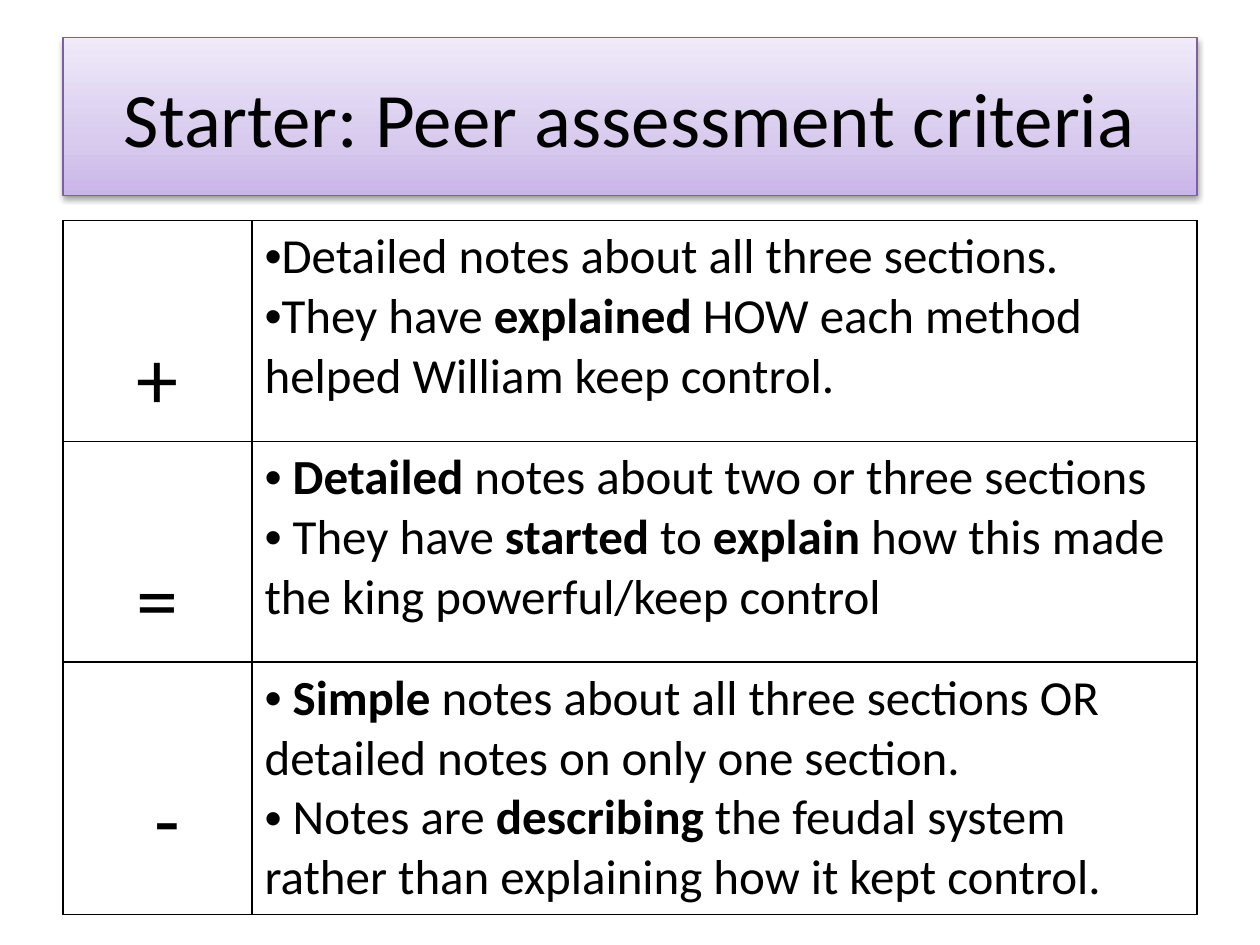
from dataclasses import dataclass

from lxml.etree import SubElement
from pptx import Presentation
from pptx.dml.color import RGBColor
from pptx.enum.text import MSO_ANCHOR, PP_ALIGN
from pptx.oxml import parse_xml
from pptx.oxml.ns import nsdecls, qn
from pptx.util import Cm, Pt

# Content: each run is (text, bold)
TITLE = "Starter: Peer assessment criteria"
CRITERIA = [
    ("+", [
        [("Detailed notes about all three sections.", False)],
        [("They have ", False), ("explained", True),
         (" HOW each method helped William keep control.", False)],
    ]),
    ("=", [
        [(" ", False), ("Detailed", True),
         (" notes about two or three sections", False)],
        [(" They have ", False), ("started", True), (" to ", False),
         ("explain", True),
         (" how this made the king powerful/keep control", False)],
    ]),
    (" -", [
        [(" ", False), ("Simple", True),
         (" notes about all three sections OR detailed notes on only one section.", False)],
        [(" Notes are ", False), ("describing", True),
         (" the feudal system rather than explaining how it kept control.", False)],
    ]),
]


@dataclass(frozen=True)
class Theme:
    font: str = "Calibri"
    ink: str = "000000"
    title_line: str = "7D60A0"
    title_stops: tuple = ((0, "C9B5E8"), (35, "D8CBEE"), (100, "F0EAF9"))
    title_size: int = 44
    symbol_size: int = 48
    body_size: int = 28


THEME = Theme()
LEFT = Cm(1.27)
TITLE_TOP, TITLE_HEIGHT = Cm(0.76), Cm(3.18)
TABLE_TOP, ROW_HEIGHT = Cm(4.45), Cm(4.45)
COLUMN_WIDTHS = (Cm(3.81), Cm(19.05))
SYMBOL_MARGIN = Cm(2.19)  # puts the symbol one line down


def add_run(paragraph, text, size, bold=False):
    run = paragraph.add_run()
    run.text = text
    run.font.name = THEME.font
    run.font.size = Pt(size)
    run.font.bold = bold
    run.font.color.rgb = RGBColor.from_string(THEME.ink)


def add_bullet(paragraph):
    properties = paragraph._p.get_or_add_pPr()
    properties.set("marL", "0")
    properties.set("indent", "0")
    SubElement(properties, qn("a:buFont"), typeface="Arial")
    SubElement(properties, qn("a:buChar"), char="•")


def format_cell(cell):
    properties = cell._tc.get_or_add_tcPr()
    for side in ("a:lnL", "a:lnR", "a:lnT", "a:lnB"):
        line = SubElement(properties, qn(side), w=str(Pt(1)))
        fill = SubElement(line, qn("a:solidFill"))
        SubElement(fill, qn("a:srgbClr"), val=THEME.ink)
    cell.fill.background()


def add_title(slide):
    title = slide.shapes.title
    title.left, title.top = LEFT, TITLE_TOP
    title.width, title.height = sum(COLUMN_WIDTHS), TITLE_HEIGHT
    title.text_frame.vertical_anchor = MSO_ANCHOR.MIDDLE
    paragraph = title.text_frame.paragraphs[0]
    paragraph.alignment = PP_ALIGN.CENTER
    add_run(paragraph, TITLE, THEME.title_size)

    # Gradient, outline and soft shadow
    stops = "".join(
        f'<a:gs pos="{position * 1000}"><a:srgbClr val="{color}"/></a:gs>'
        for position, color in THEME.title_stops)
    properties = title._element.spPr
    properties.append(parse_xml(
        f'<a:gradFill {nsdecls("a")} rotWithShape="1"><a:gsLst>{stops}</a:gsLst>'
        '<a:lin ang="16200000" scaled="0"/></a:gradFill>'))
    title.line.color.rgb = RGBColor.from_string(THEME.title_line)
    title.line.width = Pt(0.75)
    properties.append(parse_xml(
        f'<a:effectLst {nsdecls("a")}><a:outerShdw blurRad="{Pt(3.1)}" '
        f'dist="{Pt(1.6)}" dir="5400000" rotWithShape="0">'
        f'<a:srgbClr val="{THEME.ink}"><a:alpha val="38000"/></a:srgbClr>'
        '</a:outerShdw></a:effectLst>'))


def add_criteria_table(slide):
    table = slide.shapes.add_table(
        len(CRITERIA), len(COLUMN_WIDTHS), LEFT, TABLE_TOP,
        sum(COLUMN_WIDTHS), ROW_HEIGHT * len(CRITERIA)).table
    table.first_row = table.horz_banding = False
    for column, width in zip(table.columns, COLUMN_WIDTHS):
        column.width = width

    for row, (symbol, points) in zip(table.rows, CRITERIA):
        row.height = ROW_HEIGHT
        symbol_cell, points_cell = row.cells
        for cell in row.cells:
            format_cell(cell)

        # Symbol column
        symbol_cell.margin_top = SYMBOL_MARGIN
        paragraph = symbol_cell.text_frame.paragraphs[0]
        paragraph.alignment = PP_ALIGN.CENTER
        add_run(paragraph, symbol, THEME.symbol_size)

        # Bulleted criteria
        frame = points_cell.text_frame
        for index, runs in enumerate(points):
            paragraph = frame.add_paragraph() if index else frame.paragraphs[0]
            add_bullet(paragraph)
            for text, bold in runs:
                add_run(paragraph, text, THEME.body_size, bold)


def main():
    presentation = Presentation()
    presentation.slide_width, presentation.slide_height = Cm(25.4), Cm(19.05)
    slide = presentation.slides.add_slide(presentation.slide_layouts[5])
    add_title(slide)
    add_criteria_table(slide)
    presentation.save("out.pptx")


if __name__ == "__main__":
    main()
